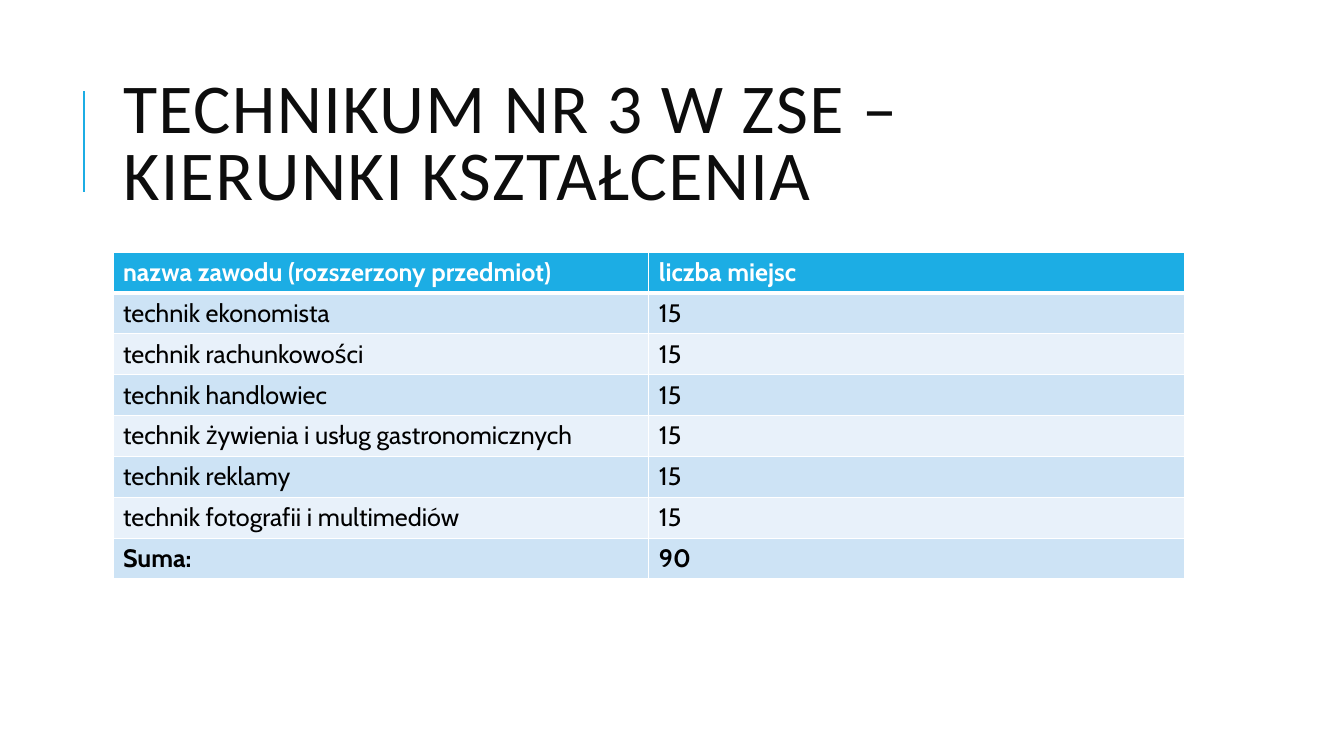
from dataclasses import dataclass

from lxml import etree
from pptx import Presentation
from pptx import util as u
from pptx.dml.color import RGBColor
from pptx.enum import shapes, text
from pptx.oxml import ns


@dataclass(frozen=True)
class Theme:
    accent: str = "1CADE4"
    title_color: str = "0D0D0D"
    body_color: str = "000000"
    white: str = "FFFFFF"
    bands: tuple = ("CDE3F5", "E8F1FA")
    title_font: str = "Calibri"
    body_font: str = "Cabin"
    title_size: int = 50
    body_size: int = 18
    border: int = 1
    header_border: int = 3


class SlideBuilder:
    def __init__(self, presentation, theme):
        self.theme = theme
        self.slide = presentation.slides.add_slide(presentation.slide_layouts[5])

    def style_run(self, run, font, size, color, bold=False):
        run.font.name = font
        run.font.size = u.Pt(size)
        run.font.bold = bold
        run.font.color.rgb = RGBColor.from_string(color)

    def title(self, wording, left, top, width, height):
        shape = self.slide.shapes.title
        shape.left, shape.top = u.Inches(left), u.Inches(top)
        shape.width, shape.height = u.Inches(width), u.Inches(height)
        frame = shape.text_frame
        frame.text = wording
        frame.word_wrap = True
        frame.auto_size = text.MSO_AUTO_SIZE.NONE
        frame.vertical_anchor = text.MSO_ANCHOR.MIDDLE
        paragraph = frame.paragraphs[0]
        paragraph.alignment = text.PP_ALIGN.LEFT
        paragraph.line_spacing = 0.8
        run = paragraph.runs[0]
        self.style_run(run, self.theme.title_font, self.theme.title_size, self.theme.title_color)
        run.font._element.set("spc", "100")

    def accent_line(self, x, start, end):
        line = self.slide.shapes.add_connector(
            shapes.MSO_CONNECTOR.STRAIGHT,
            u.Inches(x), u.Inches(start), u.Inches(x), u.Inches(end))
        line.line.color.rgb = RGBColor.from_string(self.theme.accent)
        line.line.width = u.Pt(1.5)
        etree.SubElement(line._element.spPr, ns.qn("a:effectLst"))

    def cell_borders(self, cell, top, bottom):
        properties = cell._tc.get_or_add_tcPr()
        widths = {"L": self.theme.border, "R": self.theme.border, "T": top, "B": bottom}
        for side, width in widths.items():
            border = etree.SubElement(properties, ns.qn(f"a:ln{side}"), w=str(u.Pt(width)))
            fill = etree.SubElement(border, ns.qn("a:solidFill"))
            etree.SubElement(fill, ns.qn("a:srgbClr"), val=self.theme.white)

    def table(self, rows, left, top, width, height):
        theme = self.theme
        frame = self.slide.shapes.add_table(
            len(rows), len(rows[0]),
            u.Inches(left), u.Inches(top), u.Inches(width), u.Inches(height))
        last = len(rows) - 1
        for row_index, values in enumerate(rows):
            header = row_index == 0
            background = theme.accent if header else theme.bands[(row_index - 1) % 2]
            color = theme.white if header else theme.body_color
            for column, value in enumerate(values):
                cell = frame.table.cell(row_index, column)
                self.cell_borders(
                    cell,
                    theme.header_border if row_index == 1 else theme.border,
                    theme.header_border if header else theme.border)
                cell.fill.solid()
                cell.fill.fore_color.rgb = RGBColor.from_string(background)
                cell.text_frame.text = str(value)
                self.style_run(cell.text_frame.paragraphs[0].runs[0], theme.body_font,
                               theme.body_size, color, bold=row_index in (0, last))


def main():
    presentation = Presentation()
    presentation.slide_width = u.Inches(13.33)
    presentation.slide_height = u.Inches(7.5)
    builder = SlideBuilder(presentation, Theme())
    left, width = 1.12, 10.63
    places = {
        "technik ekonomista": 15,
        "technik rachunkowości": 15,
        "technik handlowiec": 15,
        "technik żywienia i usług gastronomicznych": 15,
        "technik reklamy": 15,
        "technik fotografii i multimediów": 15,
    }
    rows = [
        ("nazwa zawodu (rozszerzony przedmiot)", "liczba miejsc"),
        *places.items(),
        ("Suma:", sum(places.values())),
    ]
    builder.accent_line(0.83, 1.9, 0.9)
    builder.title("TECHNIKUM NR 3 W ZSE – KIERUNKI KSZTAŁCENIA", left, 0.64, width, 1.64)
    builder.table(rows, left, 2.5, width, 3.24)
    presentation.save("out.pptx")


if __name__ == "__main__":
    main()
